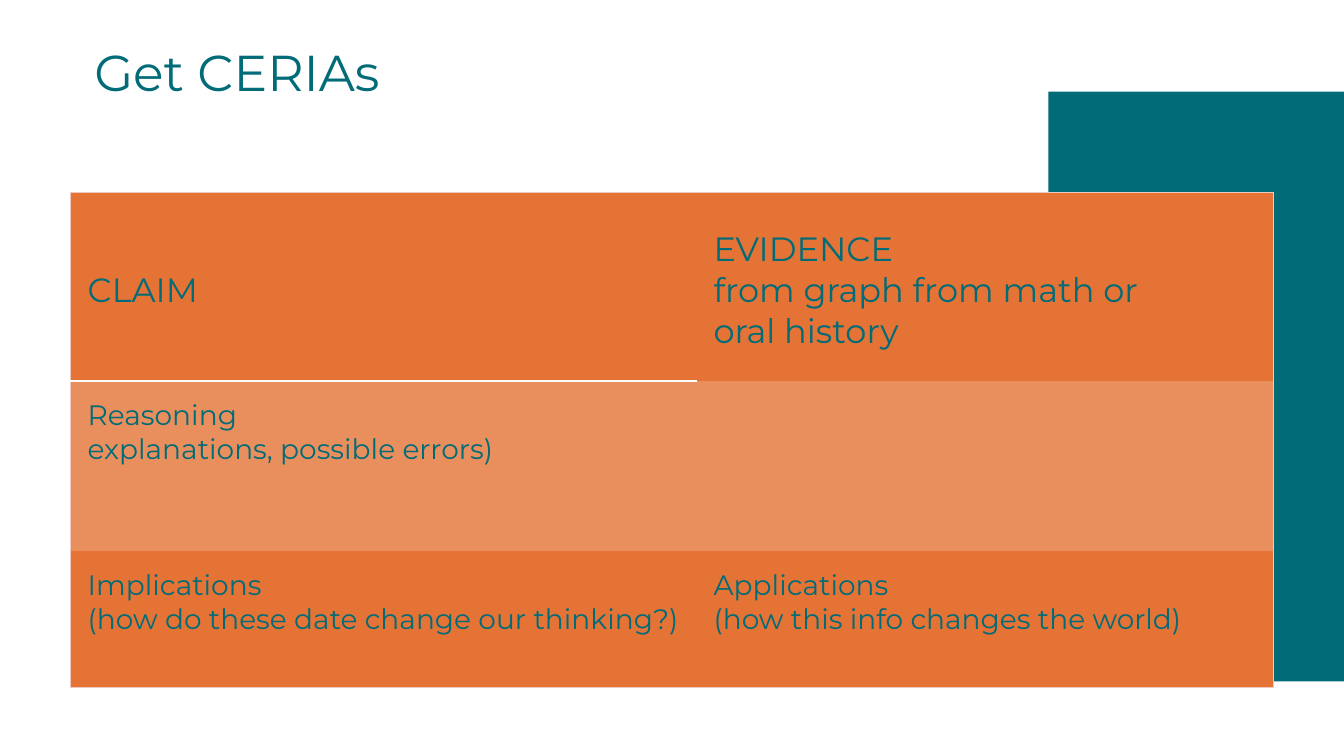
from dataclasses import dataclass

from lxml import etree
from pptx import Presentation
from pptx.dml.color import RGBColor
from pptx.enum.shapes import MSO_SHAPE
from pptx.enum.text import MSO_ANCHOR, PP_ALIGN
from pptx.oxml.ns import qn
from pptx.slide import Slide
from pptx.table import _Cell
from pptx.text.text import TextFrame
from pptx.util import Pt

RECTANGLE = MSO_SHAPE.RECTANGLE
TOP, MIDDLE = MSO_ANCHOR.TOP, MSO_ANCHOR.MIDDLE
LEFT, CENTER = PP_ALIGN.LEFT, PP_ALIGN.CENTER


@dataclass(frozen=True)
class Theme:
    teal: str = "016B78"
    orange: str = "E47335"
    light_orange: str = "E98F5D"
    frame: str = "EFCAC0"
    white: str = "FFFFFF"
    font: str = "Montserrat"
    title_size: float = 36
    heading_size: float = 24
    body_size: float = 20


@dataclass(frozen=True)
class Border:
    color: str
    width: float


@dataclass(frozen=True)
class TableRow:
    height: float
    fill: str
    size: float
    anchor: MSO_ANCHOR
    cells: tuple[tuple[str, ...], ...]


THEME = Theme()
FRAME = Border(THEME.frame, 0.5)
CLAIM_RULE = Border(THEME.white, 1.5)
COLUMN_WIDTHS = (447.12, 411.84)
ROWS = (
    TableRow(134.64, THEME.orange, THEME.heading_size, MIDDLE, (
        ("CLAIM",),
        ("EVIDENCE", "from graph from math or", "oral history"),
    )),
    TableRow(121.68, THEME.light_orange, THEME.body_size, TOP, (
        ("Reasoning", "explanations, possible errors)"),
        (),
    )),
    TableRow(97.2, THEME.orange, THEME.body_size, TOP, (
        ("Implications", "(how do these date change our thinking?)"),
        ("Applications", "(how this info changes the world)"),
    )),
)


def write_lines(frame: TextFrame, lines: tuple[str, ...], size: float,
                alignment: PP_ALIGN = LEFT, spacing: float = 1.0) -> None:
    for index, line in enumerate(lines):
        paragraph = frame.add_paragraph() if index else frame.paragraphs[0]
        paragraph.alignment = alignment
        paragraph.line_spacing = spacing
        run = paragraph.add_run()
        run.text = line
        run.font.name = THEME.font
        run.font.size = Pt(size)
        run.font.color.rgb = RGBColor.from_string(THEME.teal)


def set_borders(cell: _Cell, row: int, column: int) -> None:
    """Frame the outer edges and draw one rule below the claim."""
    borders = {
        "a:lnL": FRAME if column == 0 else None,
        "a:lnR": FRAME if column == len(COLUMN_WIDTHS) - 1 else None,
        "a:lnT": FRAME if row == 0 else None,
        "a:lnB": FRAME if row == len(ROWS) - 1 else None,
    }
    if column == 0 and row < 2:
        borders["a:lnB" if row == 0 else "a:lnT"] = CLAIM_RULE
    properties = cell._tc.get_or_add_tcPr()
    for tag, border in borders.items():
        line = etree.SubElement(properties, qn(tag))
        if border is None:
            etree.SubElement(line, qn("a:noFill"))
            continue
        line.set("w", str(int(Pt(border.width))))
        fill = etree.SubElement(line, qn("a:solidFill"))
        etree.SubElement(fill, qn("a:srgbClr"), val=border.color)


def add_side_panel(slide: Slide) -> None:
    shape = slide.shapes.add_shape(RECTANGLE, Pt(748.8), Pt(65.5), Pt(211.2), Pt(421.2))
    shape.shadow.inherit = False
    shape.fill.solid()
    shape.fill.fore_color.rgb = RGBColor.from_string(THEME.teal)
    shape.line.fill.background()


def add_ceria_table(slide: Slide) -> None:
    table = slide.shapes.add_table(
        len(ROWS), len(COLUMN_WIDTHS), Pt(50.4), Pt(137.5),
        Pt(sum(COLUMN_WIDTHS)), Pt(sum(row.height for row in ROWS))).table
    table.first_row = False
    table.horz_banding = False
    for column, width in enumerate(COLUMN_WIDTHS):
        table.columns[column].width = Pt(width)
    for row_index, row in enumerate(ROWS):
        table.rows[row_index].height = Pt(row.height)
        for column, lines in enumerate(row.cells):
            cell = table.cell(row_index, column)
            cell.margin_left = cell.margin_right = cell.margin_top = Pt(12.24)
            cell.margin_bottom = Pt(6.48)
            cell.vertical_anchor = row.anchor
            set_borders(cell, row_index, column)
            cell.fill.solid()
            cell.fill.fore_color.rgb = RGBColor.from_string(row.fill)
            write_lines(cell.text_frame, lines, row.size)


def add_title(slide: Slide) -> None:
    box = slide.shapes.add_textbox(Pt(-141.12), Pt(1.44), Pt(620.64), Pt(104.4))
    frame = box.text_frame
    frame.word_wrap = True
    frame.vertical_anchor = MIDDLE
    write_lines(frame, ("Get CERIAs",), THEME.title_size, CENTER, 0.9)


def main() -> None:
    presentation = Presentation()
    presentation.slide_width = Pt(960)
    presentation.slide_height = Pt(540)
    slide = presentation.slides.add_slide(presentation.slide_layouts[6])

    # Background panel, then the table over it, then the title
    add_side_panel(slide)
    add_ceria_table(slide)
    add_title(slide)
    presentation.save("out.pptx")


if __name__ == "__main__":
    main()
